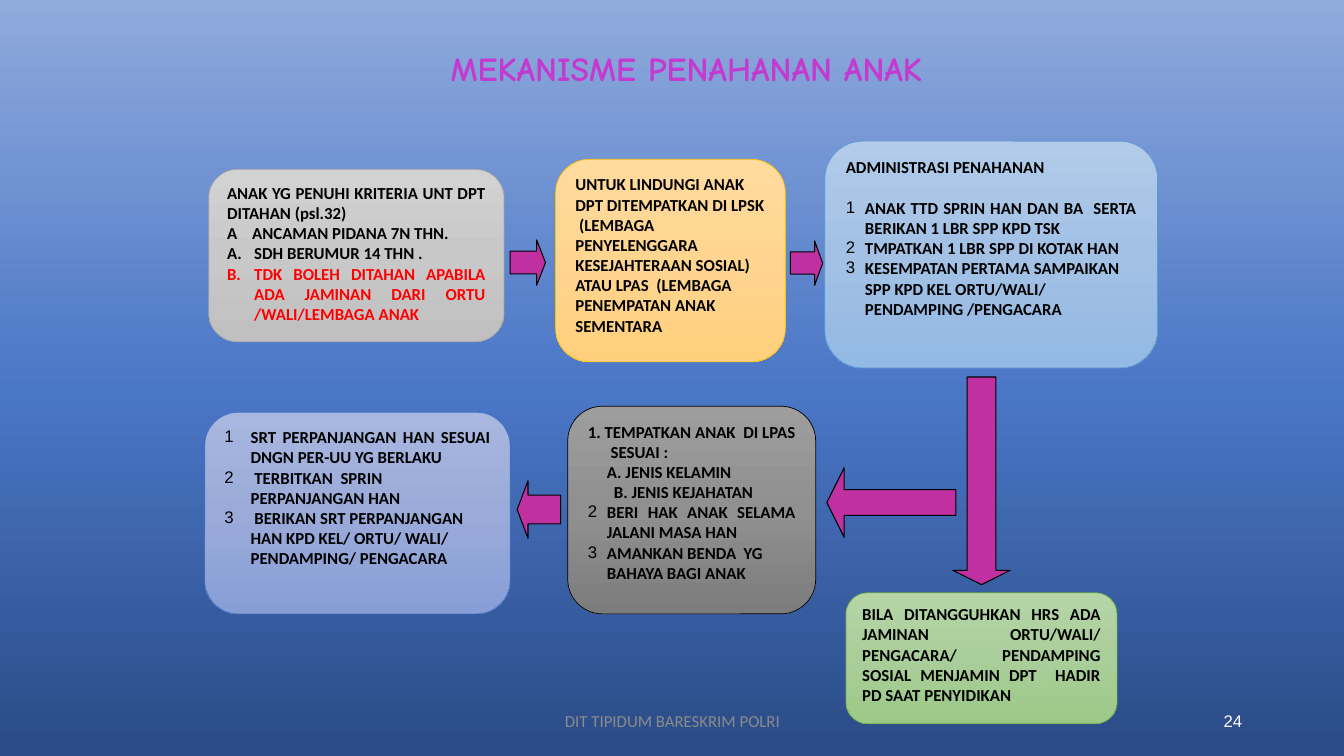
import pptx
import pptx.util
import pptx.dml.color
import pptx.enum.shapes
import pptx.enum.text
import pptx.oxml.ns
import lxml.etree

RGBColor = pptx.dml.color.RGBColor
Shape = pptx.enum.shapes.MSO_SHAPE
Align = pptx.enum.text.PP_ALIGN
Anchor = pptx.enum.text.MSO_ANCHOR
qn = pptx.oxml.ns.qn

BLACK = RGBColor(0x00, 0x00, 0x00)
WHITE = RGBColor(0xFF, 0xFF, 0xFF)
RED = RGBColor(0xFF, 0x00, 0x00)
FOOTER_GRAY = RGBColor(0x8C, 0x8C, 0x8C)
TITLE_PINK = RGBColor(0xC4, 0x39, 0xCF)
ARROW_MAGENTA = RGBColor(0xC0, 0x30, 0xA1)
GRAY_LINE = RGBColor(0xA5, 0xA5, 0xA5)
GOLD_LINE = RGBColor(0xFF, 0xC0, 0x00)
INDIGO_LINE = RGBColor(0x44, 0x72, 0xC4)
SKY_LINE = RGBColor(0x5B, 0x9B, 0xD5)
GREEN_LINE = RGBColor(0x70, 0xAD, 0x47)
BACKDROP = (RGBColor(0x2A, 0x4B, 0x86), RGBColor(0x4A, 0x76, 0xC6), RGBColor(0x8F, 0xAA, 0xDC))
SILVER = (RGBColor(0xD2, 0xD2, 0xD2), RGBColor(0xC8, 0xC8, 0xC8), RGBColor(0xC0, 0xC0, 0xC0))
GOLD = (RGBColor(0xFF, 0xDB, 0x9E), RGBColor(0xFF, 0xD5, 0x90), RGBColor(0xFF, 0xD0, 0x7C))
INDIGO = (RGBColor(0xA8, 0xB7, 0xDF), RGBColor(0x9A, 0xAB, 0xD9), RGBColor(0x88, 0x9E, 0xD7))
CHARCOAL = (RGBColor(0x9D, 0x9D, 0x9D), RGBColor(0x90, 0x90, 0x90), RGBColor(0x7C, 0x7C, 0x7C))
SKY = (RGBColor(0xB1, 0xCB, 0xE9), RGBColor(0xA3, 0xC1, 0xE5), RGBColor(0x93, 0xB9, 0xE4))
GREEN = (RGBColor(0xB5, 0xD5, 0xA7), RGBColor(0xAA, 0xCE, 0x9A), RGBColor(0x9C, 0xC9, 0x87))
CARD_DEFAULTS = ("", Align.JUSTIFY, 0, 0, None, BLACK, 0)


class FlowSlide:
    font = "Calibri"
    size = 12

    def __init__(self, presentation):
        self.width = presentation.slide_width
        self.height = presentation.slide_height
        self.slide = presentation.slides.add_slide(presentation.slide_layouts[5])

    def place(self, left, top, width, height):
        return [round(share * side / 100) for share, side in
                zip((left, top, width, height), (self.width, self.height) * 2)]

    def gradient(self, fill, element, colors, angle, middle=50):
        fill.gradient()
        fill.gradient_angle = angle
        stops = element.find(".//" + qn("a:gradFill")).find(qn("a:gsLst"))
        for stop in list(stops):
            stops.remove(stop)
        for position, color in zip((0, middle, 100), colors):
            stop = lxml.etree.SubElement(stops, qn("a:gs"), pos=str(position * 1000))
            lxml.etree.SubElement(stop, qn("a:srgbClr"), val=str(color))

    def background(self, colors):
        self.gradient(self.slide.background.fill, self.slide.element, colors, 90, 48)

    def add_text(self, paragraph, text, align, color=BLACK, bold=True, font=None, size=None):
        paragraph.alignment = align
        run = paragraph.add_run()
        run.text = text
        run.font.name = font or self.font
        run.font.size = pptx.util.Pt(size or self.size)
        run.font.bold = bold
        run.font.color.rgb = color

    def indent(self, paragraph, left, first, bullet):
        properties = paragraph._p.get_or_add_pPr()
        properties.set("marL", str(pptx.util.Inches(left)))
        properties.set("indent", str(pptx.util.Inches(first)))
        if bullet == "A.":
            lxml.etree.SubElement(properties, qn("a:buAutoNum"), type="alphaUcPeriod")
        elif bullet:
            lxml.etree.SubElement(properties, qn("a:buFont"), typeface="Arial")
            lxml.etree.SubElement(properties, qn("a:buChar"), char=bullet)

    def title(self, text, *area):
        shape = self.slide.shapes.title
        shape.left, shape.top, shape.width, shape.height = self.place(*area)
        shape.text_frame.vertical_anchor = Anchor.MIDDLE
        paragraph = shape.text_frame.paragraphs[0]
        paragraph.line_spacing = 0.9
        self.add_text(paragraph, text, Align.CENTER, TITLE_PINK, font="Comic Neue", size=24)

    def label(self, text, area, align, color, font=None):
        frame = self.slide.shapes.add_textbox(*self.place(*area)).text_frame
        frame.word_wrap = True
        frame.vertical_anchor = Anchor.MIDDLE
        self.add_text(frame.paragraphs[0], text, align, color, bold=False, font=font)

    def outline(self, kind, area, color, width):
        shape = self.slide.shapes.add_shape(kind, *self.place(*area))
        shape.shadow.inherit = False
        shape.line.color.rgb = color
        shape.line.width = pptx.util.Pt(width)
        return shape

    def arrow(self, kind, area, thickness=0.5):
        shape = self.outline(kind, area, BLACK, 0.75)
        shape.adjustments[0] = thickness
        shape.adjustments[1] = 0.25
        shape.fill.solid()
        shape.fill.fore_color.rgb = ARROW_MAGENTA

    def card(self, area, colors, line, items):
        shape = self.outline(Shape.ROUNDED_RECTANGLE, area, line, 0.5)
        self.gradient(shape.fill, shape.element, colors, 270)
        frame = shape.text_frame
        frame.word_wrap = True
        frame.vertical_anchor = Anchor.TOP
        for index, item in enumerate(items):
            text, align, left, first, bullet, color, after = item + CARD_DEFAULTS[len(item):]
            paragraph = frame.paragraphs[0] if index == 0 else frame.add_paragraph()
            if after:
                paragraph.space_after = pptx.util.Pt(after)
            self.indent(paragraph, left, first, bullet)
            self.add_text(paragraph, text, align, color)


def main():
    presentation = pptx.Presentation()
    presentation.slide_width = pptx.util.Inches(13.33)
    presentation.slide_height = pptx.util.Inches(7.5)
    flow = FlowSlide(presentation)
    flow.background(BACKDROP)
    justify, left = Align.JUSTIFY, Align.LEFT

    flow.card((15.53, 22.4, 21.98, 22.8), SILVER, GRAY_LINE, [
        ("ANAK YG PENUHI KRITERIA UNT DPT DITAHAN (psl.32)",),
        ("A\tANCAMAN PIDANA 7N THN.", justify, 0.25, -0.25),
        ("SDH BERUMUR 14 THN .", justify, 0.27, -0.27, "A."),
        ("TDK BOLEH DITAHAN APABILA ADA JAMINAN DARI ORTU /WALI/LEMBAGA ANAK ",
         justify, 0.27, -0.27, "A.", RED),
    ])
    flow.card((41.34, 21.07, 17.1, 26.8), GOLD, GOLD_LINE, [
        ("UNTUK LINDUNGI ANAK DPT DITEMPATKAN DI LPSK  (LEMBAGA  PENYELENGGARA "
         "KESEJAHTERAAN SOSIAL)  ATAU LPAS  (LEMBAGA PENEMPATAN ANAK SEMENTARA", left),
    ])
    flow.card((15.23, 54.53, 22.73, 26.67), INDIGO, INDIGO_LINE, [
        ("SRT PERPANJANGAN HAN SESUAI DNGN PER-UU YG BERLAKU", justify, 0.26, -0.26, "1"),
        (" TERBITKAN  SPRIN PERPANJANGAN HAN", left, 0.26, -0.26, "2"),
        (" BERIKAN SRT PERPANJANGAN HAN KPD KEL/ ORTU/ WALI/ PENDAMPING/ PENGACARA",
         left, 0.26, -0.26, "3"),
    ])
    flow.card((42.24, 53.73, 18.45, 27.47), CHARCOAL, BLACK, [
        ("1. TEMPATKAN ANAK  DI LPAS  SESUAI :", justify, 0.19, -0.19),
        ("A. JENIS KELAMIN", justify, 0.19),
        ("B. JENIS KEJAHATAN", justify, 0.26),
        ("BERI HAK ANAK SELAMA JALANI MASA HAN", justify, 0.19, -0.19, "2"),
        ("AMANKAN BENDA  YG BAHAYA BAGI ANAK", left, 0.19, -0.19, "3"),
    ])
    flow.card((61.37, 18.67, 24.76, 30), SKY, SKY_LINE, [
        ("ADMINISTRASI PENAHANAN ", justify, 0.19, -0.19, None, BLACK, 14.5),
        ("ANAK TTD SPRIN HAN DAN BA  SERTA BERIKAN 1 LBR SPP KPD TSK",
         justify, 0.19, -0.19, "1"),
        ("TMPATKAN 1 LBR SPP DI KOTAK HAN", left, 0.19, -0.19, "2"),
        ("KESEMPATAN PERTAMA SAMPAIKAN SPP KPD KEL ORTU/WALI/ PENDAMPING /PENGACARA",
         left, 0.19, -0.19, "3"),
    ])
    flow.card((62.94, 78.4, 20.18, 17.33), GREEN, GREEN_LINE, [
        ("BILA DITANGGUHKAN HRS ADA JAMINAN ORTU/WALI/ PENGACARA/ PENDAMPING "
         "SOSIAL MENJAMIN DPT  HADIR PD SAAT PENYIDIKAN",),
    ])

    flow.arrow(Shape.RIGHT_ARROW, (37.96, 31.73, 2.63, 6))
    flow.arrow(Shape.RIGHT_ARROW, (58.81, 31.87, 2.4, 5.87))
    flow.arrow(Shape.LEFT_ARROW, (61.52, 61.87, 9.6, 9.2), 0.37)
    flow.arrow(Shape.LEFT_ARROW, (38.48, 63.6, 3.23, 7.6))
    flow.arrow(Shape.DOWN_ARROW, (70.89, 49.87, 4.28, 27.47))

    flow.title("MEKANISME PENAHANAN ANAK", 24.31, 4.4, 53.49, 9.87)
    flow.label("DIT TIPIDUM BARESKRIM POLRI", (33.16, 92.67, 33.76, 5.33),
               Align.CENTER, FOOTER_GRAY)
    flow.label("24", (70.67, 92.67, 22.5, 5.33), Align.RIGHT, WHITE, "Arial")
    presentation.save("out.pptx")


if __name__ == "__main__":
    main()
